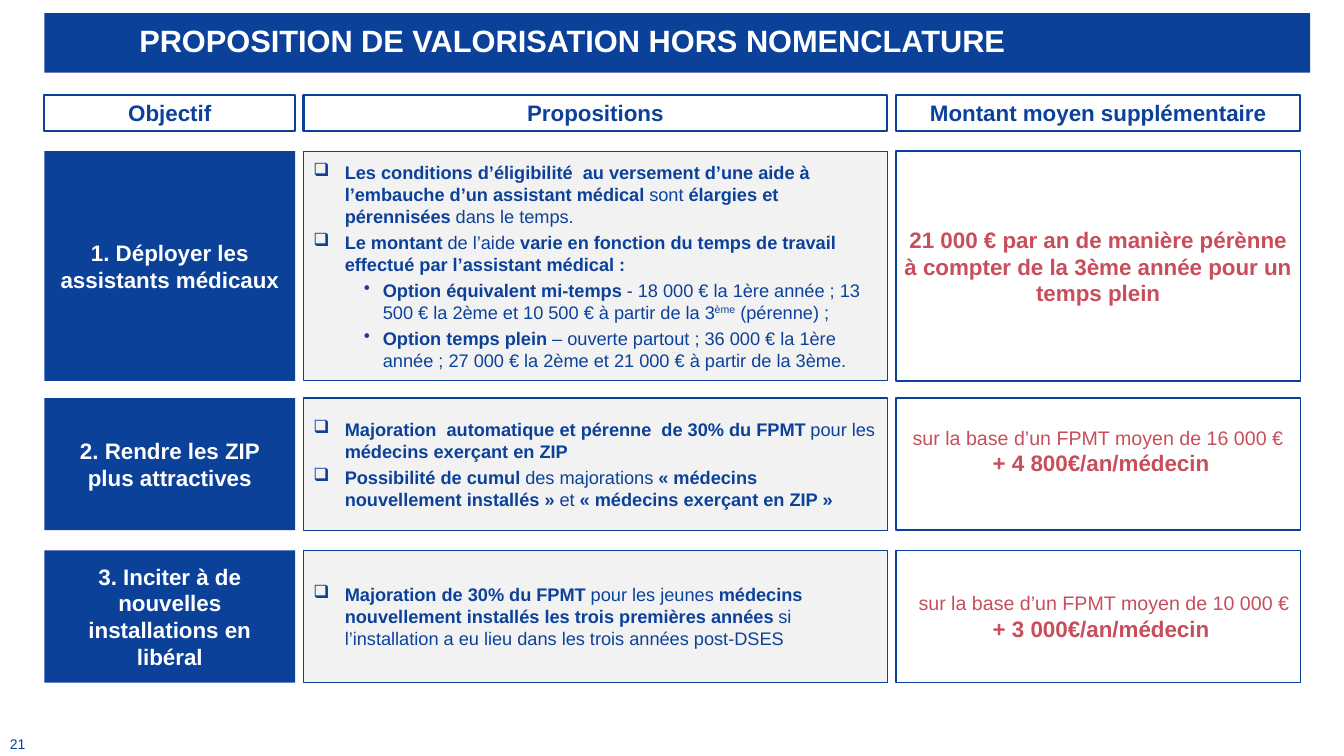
from dataclasses import dataclass

import pptx
import pptx.dml.color
import pptx.enum.shapes
import pptx.enum.text
import pptx.oxml
import pptx.oxml.ns
import pptx.util
from pptx.util import Cm, Pt

FONT = "Arial"
BLUE, RED, GREY, WHITE = "0C419A", "C74E5A", "F2F2F2", "FFFFFF"
CENTER = pptx.enum.text.PP_ALIGN.CENTER
LEFT = pptx.enum.text.PP_ALIGN.LEFT
MIDDLE = pptx.enum.text.MSO_ANCHOR.MIDDLE


@dataclass
class Column:
    heading: str
    left: float
    width: float


@dataclass
class Line:
    """A paragraph: **bold** and ^superscript^ are marked in the text."""
    text: str
    size: float = 13
    color: str = BLUE
    align: int = LEFT
    bullet: str = ""
    margin: float = 0
    hanging: float = 0
    before: float = 0


@dataclass
class Row:
    top: float
    height: float
    goal: str
    proposals: list[Line]
    amounts: list[Line]
    amount_bottom: float = 0.13


def checked(text: str) -> Line:
    return Line(text, bullet="❑", margin=0.79, hanging=0.79, before=3)


def option(text: str) -> Line:
    return Line(text, bullet="•", margin=1.75, hanging=0.48, before=3)


def amount(text: str, size: float = 16, margin: float = 0) -> Line:
    return Line(text, size, RED, CENTER, margin=margin)


COLUMNS = [
    Column("Objectif", 1.12, 6.32),
    Column("Propositions", 7.65, 14.71),
    Column("Montant moyen supplémentaire", 22.58, 10.19),
]

ROWS = [
    Row(3.81, 5.79, "1. Déployer les assistants médicaux", [
        checked("**Les conditions d’éligibilité  au versement d’une aide à l’embauche "
                "d’un assistant médical **sont **élargies et pérennisées **dans le temps."),
        checked("**Le montant **de l’aide **varie en fonction du temps de travail "
                "effectué par l’assistant médical :**"),
        option("**Option équivalent mi-temps **- 18 000 € la 1ère année ; 13 500 € "
               "la 2ème et 10 500 € à partir de la 3^ème^ (pérenne) ;"),
        option("**Option temps plein **– ouverte partout ; 36 000 € la 1ère année ; "
               "27 000 € la 2ème et 21 000 € à partir de la 3ème."),
    ], [
        amount("**21 000 € par an de manière pérènne à compter de la 3ème année "
               "pour un temps plein**"),
    ]),
    Row(10.03, 3.33, "2. Rendre les ZIP plus attractives", [
        checked("**Majoration  automatique et pérenne  de 30% du FPMT **pour les "
                "**médecins exerçant en ZIP**"),
        checked("**Possibilité de cumul **des majorations **« médecins nouvellement "
                "installés » **et** « médecins exerçant en ZIP »**"),
    ], [
        amount("sur la base d’un FPMT moyen de 16 000 €", 14),
        amount("**+ 4 800€/an/médecin**", margin=0.15),
    ], amount_bottom=0.78),
    Row(13.87, 3.33, "3. Inciter à de nouvelles installations en libéral", [
        checked("**Majoration de 30% du FPMT **pour les jeunes **médecins nouvellement "
                "installés les trois premières années **si l’installation a eu lieu "
                "dans les trois années post-DSES"),
    ], [
        amount("sur la base d’un FPMT moyen de 10 000 €", 14, margin=0.3),
        amount("**+ 3 000€/an/médecin**", margin=0.15),
    ]),
]


def rgb(color: str) -> pptx.dml.color.RGBColor:
    return pptx.dml.color.RGBColor.from_string(color)


def set_font(font, size: float, color: str, bold: bool) -> None:
    font.name = FONT
    font.size = Pt(size)
    font.bold = bold
    font.color.rgb = rgb(color)


def write_line(para, line: Line, first: bool) -> None:
    para.alignment = line.align
    para.space_before = Pt(0 if first else line.before)
    properties = para._p.get_or_add_pPr()
    properties.set("marL", str(Cm(line.margin)))
    properties.set("indent", str(Cm(-line.hanging)))
    if line.bullet:
        bullet = pptx.oxml.parse_xml(
            f'<a:buChar {pptx.oxml.ns.nsdecls("a")} char="{line.bullet}"/>')
        properties.append(bullet)
    for part, passage in enumerate(line.text.split("**")):
        for piece, words in enumerate(passage.split("^")):
            if words:
                span = para.add_run()
                span.text = words
                set_font(span.font, line.size, line.color, part % 2 == 1)
                if piece % 2:
                    span.font._element.set("baseline", "30000")


def add_box(page, column: Column, top: float, height: float, lines: list[Line],
            fill: str, border: float, side: float = 0.25, bottom: float = 0.13) -> None:
    box = page.shapes.add_shape(
        pptx.enum.shapes.MSO_SHAPE.RECTANGLE,
        Cm(column.left), Cm(top), Cm(column.width), Cm(height))
    box.shadow.inherit = False
    box.fill.solid()
    box.fill.fore_color.rgb = rgb(fill)
    if border:
        box.line.color.rgb = rgb(BLUE)
        box.line.width = Pt(border)
    else:
        box.line.fill.background()
    frame = box.text_frame
    frame.word_wrap = True
    frame.vertical_anchor = MIDDLE
    frame.margin_left = frame.margin_right = Cm(side)
    frame.margin_top, frame.margin_bottom = Cm(0.13), Cm(bottom)
    for index, line in enumerate(lines):
        para = frame.add_paragraph() if index else frame.paragraphs[0]
        write_line(para, line, index == 0)


def add_title(page) -> None:
    title = page.shapes.title
    title.left, title.top, title.width, title.height = Cm(1.12), Cm(0.33), Cm(31.9), Cm(1.5)
    title.fill.solid()
    title.fill.fore_color.rgb = rgb(BLUE)
    frame = title.text_frame
    frame.text = "PROPOSITION DE VALORISATION HORS NOMENCLATURE"
    frame.vertical_anchor = MIDDLE
    frame.margin_left = Cm(2.39)
    frame.margin_right = frame.margin_top = frame.margin_bottom = Cm(0.2)
    para = frame.paragraphs[0]
    para.alignment = LEFT
    para.line_spacing = 0.9
    set_font(para.runs[0].font, 22, WHITE, True)


def add_page_number(page) -> None:
    box = page.shapes.add_textbox(Cm(0), Cm(18.29), Cm(2), Cm(0.79))
    frame = box.text_frame
    frame.word_wrap = True
    frame.vertical_anchor = pptx.enum.text.MSO_ANCHOR.BOTTOM
    write_line(frame.paragraphs[0], Line("21", 10), True)


def main() -> None:
    deck = pptx.Presentation()
    deck.slide_width, deck.slide_height = Cm(33.87), Cm(19.05)
    page = deck.slides.add_slide(deck.slide_layouts[5])
    add_title(page)

    # Column headings
    for column in COLUMNS:
        heading = Line(f"**{column.heading}**", 16, align=CENTER)
        add_box(page, column, 2.39, 0.91, [heading], WHITE, 1.5)

    # Goal, proposals and amount of each row
    goals, proposals, amounts = COLUMNS
    for row in ROWS:
        goal = Line(f"**{row.goal}**", 16, WHITE, CENTER)
        add_box(page, goals, row.top, row.height, [goal], BLUE, 0)
        add_box(page, proposals, row.top, row.height, row.proposals, GREY, 0.75)
        add_box(page, amounts, row.top, row.height, row.amounts, WHITE, 1,
                side=0.2, bottom=row.amount_bottom)

    add_page_number(page)
    deck.save("out.pptx")


if __name__ == "__main__":
    main()
